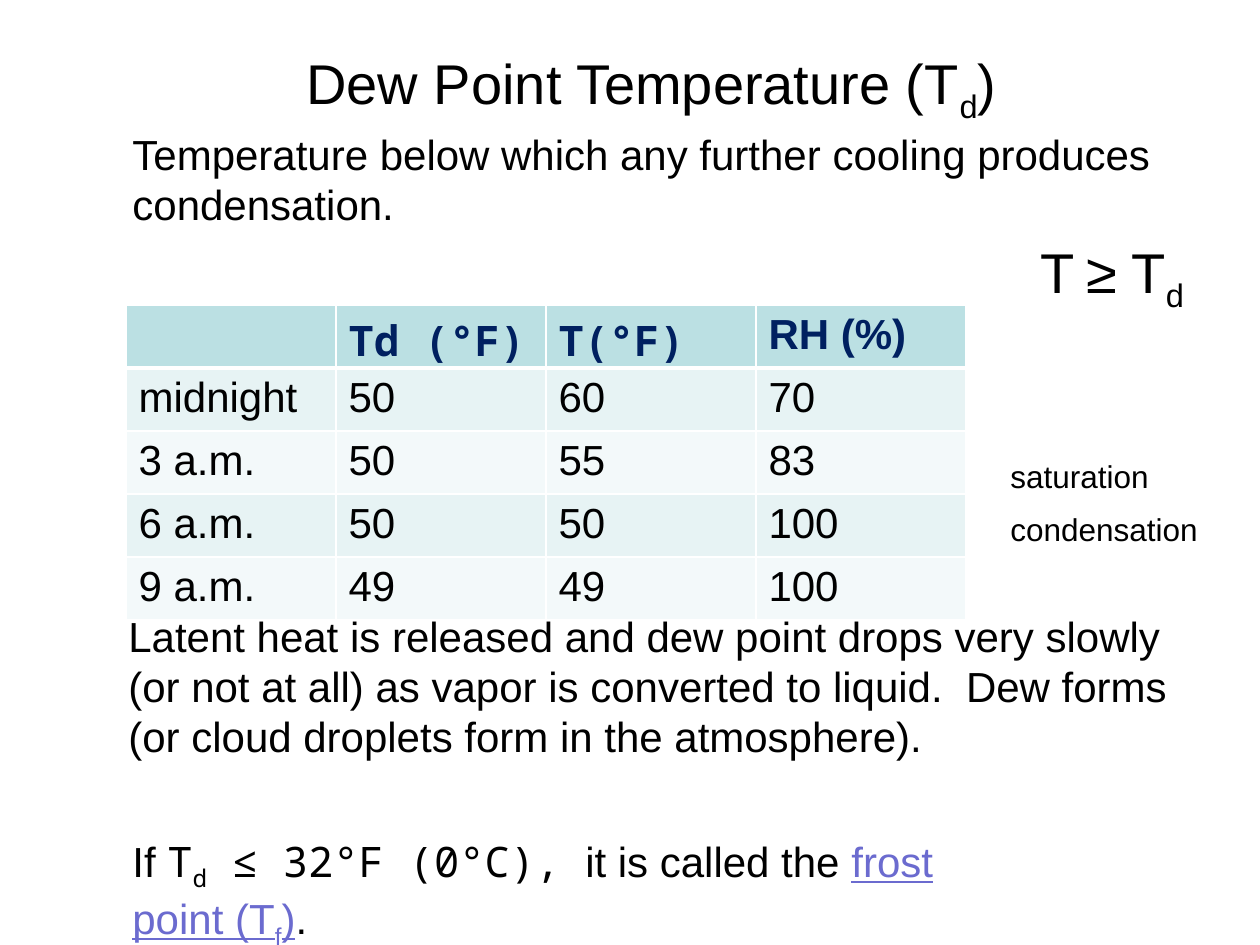
from lxml import etree
from pptx import Presentation
from pptx import util as u
from pptx.dml.color import RGBColor
from pptx.enum import text
from pptx.oxml.ns import qn

SCALE = 914400 // 126
SANS, MONO = "Arial", "Noto Sans Mono"
BLACK, NAVY, LINK, WHITE = "000000", "002060", "6B6BCF", "FFFFFF"
HEADER_FILL, BANDS = "BBE0E3", ("E7F3F4", "F3F9FA")


def px(length):
    return u.Emu(length * SCALE)


def color(value):
    return RGBColor.from_string(value)


def write(paragraph, words, size=24, font=SANS, ink=BLACK, bold=False,
          underline=False, sub=False):
    run = paragraph.add_run()
    run.text = words
    run.font.size = u.Pt(size)
    run.font.name = font
    run.font.color.rgb = color(ink)
    run.font.bold = bold
    run.font.underline = underline
    if sub:
        run._r.get_or_add_rPr().set("baseline", "-25000")


class Lesson:
    def __init__(self, deck, size=24):
        self.slide = deck.slides.add_slide(deck.slide_layouts[6])
        self.size = size

    def textbox(self, left, top, width, height, *lines, size=None, wrap=False):
        frame = self.slide.shapes.add_textbox(
            px(left), px(top), px(width), px(height)).text_frame
        frame.word_wrap = wrap
        frame.auto_size = text.MSO_AUTO_SIZE.SHAPE_TO_FIT_TEXT
        for index, line in enumerate(lines):
            paragraph = frame.add_paragraph() if index else frame.paragraphs[0]
            for words, style in line:
                write(paragraph, words, **{"size": size or self.size, **style})

    def cell(self, cell, words, fill, bottom=1, **style):
        properties = cell._tc.get_or_add_tcPr()
        for side, width in (("L", 1), ("R", 1), ("T", 1), ("B", bottom)):
            border = etree.SubElement(properties, qn(f"a:ln{side}"),
                                      w=str(u.Pt(width)))
            solid = etree.SubElement(border, qn("a:solidFill"))
            etree.SubElement(solid, qn("a:srgbClr"), val=WHITE)
        cell.fill.solid()
        cell.fill.fore_color.rgb = color(fill)
        cell.margin_bottom = 0
        if words:
            write(cell.text_frame.paragraphs[0], words, size=self.size, **style)

    def table(self, left, top, column, row, header, readings):
        table = self.slide.shapes.add_table(
            len(readings) + 1, len(header), px(left), px(top),
            px(column * len(header)), px(row * (len(readings) + 1))).table
        for part in table.columns:
            part.width = px(column)
        for part in table.rows:
            part.height = px(row)
        for c, (title, font) in enumerate(header):
            self.cell(table.cell(0, c), title, HEADER_FILL, bottom=3,
                      font=font, ink=NAVY, bold=True)
        for r, reading in enumerate(readings):
            for c, value in enumerate(reading):
                self.cell(table.cell(r + 1, c), value, BANDS[r % 2])


def plain(words):
    return [(words, {})]


def main():
    deck = Presentation()
    deck.slide_width, deck.slide_height = px(1260), px(945)
    lesson = Lesson(deck)
    sub, mono = {"sub": True}, {"font": MONO}
    link = {"ink": LINK, "underline": True}

    lesson.textbox(294, 42, 717, 81,
                   [("Dew Point Temperature (T", {}), ("d", sub), (")", {})],
                   size=32)
    lesson.textbox(120, 122, 1066, 115,
                   plain("Temperature below which any further cooling produces"),
                   plain("condensation."))
    lesson.table(126, 305, 210, 63,
                 [("", SANS), ("Td (°F)", MONO), ("T(°F)", MONO), ("RH (%)", SANS)],
                 [("midnight", "50", "60", "70"),
                  ("3 a.m.", "50", "55", "83"),
                  ("6 a.m.", "50", "50", "100"),
                  ("9 a.m.", "49", "49", "100")])
    lesson.textbox(998, 451, 165, 50, plain("saturation"), size=18)
    lesson.textbox(998, 504, 214, 50, plain("condensation"), size=18)
    lesson.textbox(116, 604, 1075, 165,
                   plain("Latent heat is released and dew point drops very slowly"),
                   plain("(or not at all) as vapor is converted to liquid.  Dew forms"),
                   plain("(or cloud droplets form in the atmosphere)."))
    lesson.textbox(120, 829, 916, 63,
                   [("If ", {}), ("T", mono), ("d", {**mono, **sub}),
                    (" ≤ 32°F (0°C), ", mono), ("it is called the ", {}),
                    ("frost point (T", link), ("f", {**link, **sub}),
                    (")", link), (".", {})],
                   wrap=True)
    lesson.textbox(1028, 231, 173, 81,
                   [("T", {}), (" ", {"size": 24}), ("≥ T", {}), ("d", sub)],
                   size=32)
    deck.save("out.pptx")


if __name__ == "__main__":
    main()
